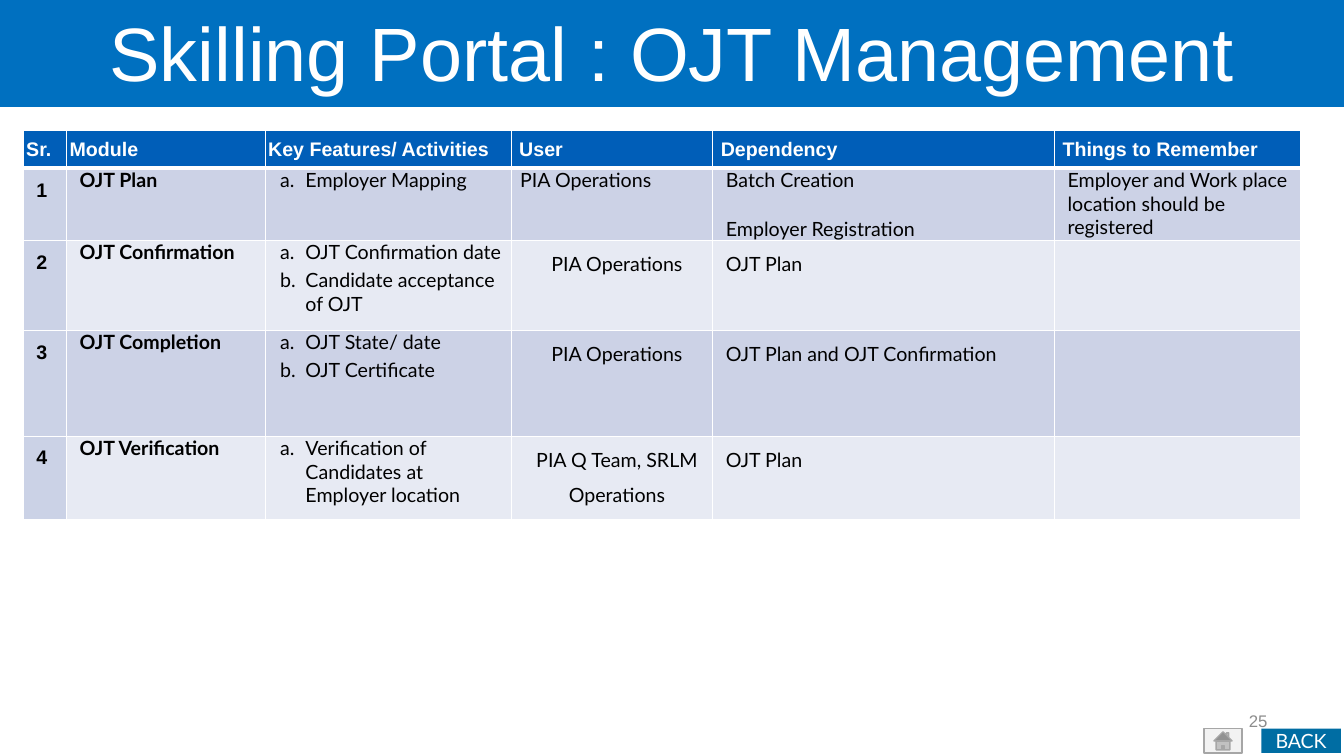
from lxml import etree
from pptx import Presentation
from pptx.dml.color import RGBColor
from pptx.enum.shapes import MSO_SHAPE
from pptx.enum.text import MSO_ANCHOR, PP_ALIGN
from pptx.oxml.ns import qn
from pptx.util import Inches, Pt

RECT, HOME = MSO_SHAPE.RECTANGLE, MSO_SHAPE.ACTION_BUTTON_HOME
TOP, MIDDLE = MSO_ANCHOR.TOP, MSO_ANCHOR.MIDDLE
LEFT, CENTER, RIGHT = PP_ALIGN.LEFT, PP_ALIGN.CENTER, PP_ALIGN.RIGHT

COLORS = {
    "white": "FFFFFF", "black": "000000", "banner": "0070C0", "header": "005EB8",
    "serial": "CBD2E6", "odd": "CCD2E6", "even": "E7EAF3", "back": "006DA3",
    "home": "F2F2F2", "home_line": "A6A6A6", "page": "8C8C8C",
}
COL_WIDTHS = [0.43, 1.97, 2.44, 2, 3.39, 2.44]
ROW_HEIGHTS = [0.38, 0.71, 0.89, 1.05, 0.83]
HEADERS = ["Sr.", "Module", "Key Features/ Activities", "User", "Dependency",
           "Things to Remember"]
MODULES = [
    ("OJT Plan", ["Employer Mapping"], "PIA Operations",
     ["Batch Creation", "Employer Registration"],
     ["Employer and Work place location should be registered"]),
    ("OJT Confirmation", ["OJT Confirmation date", "Candidate acceptance of OJT"],
     "PIA Operations", ["OJT Plan"], []),
    ("OJT Completion", ["OJT State/ date", "OJT Certificate"],
     "PIA Operations", ["OJT Plan and OJT Confirmation"], []),
    ("OJT Verification", ["Verification of Candidates at Employer location"],
     "PIA Q Team, SRLM Operations", ["OJT Plan"], []),
]


def rgb(name):
    """Return the named colour."""
    return RGBColor.from_string(COLORS[name])


def add_run(p, text, size, color, font="Arial", bold=False):
    """Add one formatted run to a paragraph."""
    r = p.add_run()
    r.text = text
    r.font.size, r.font.name, r.font.bold = Pt(size), font, bold
    r.font.color.rgb = rgb(color)
    return r


def add_box(s, kind, box, fill, line=None):
    """Add a preset shape with a plain fill and an optional outline."""
    sp = s.shapes.add_shape(kind, *map(Inches, box))
    sp.shadow.inherit = False
    sp.fill.solid()
    sp.fill.fore_color.rgb = rgb(fill)
    if line:
        sp.line.color.rgb = rgb(line)
        sp.line.width = Pt(1)
    else:
        sp.line.fill.background()
    return sp


def add_label(s, box, fill, text, size, font, anchor):
    """Add a filled rectangle with centred white text."""
    tf = add_box(s, RECT, box, fill).text_frame
    tf.word_wrap = True
    tf.vertical_anchor = anchor
    tf.margin_left = tf.margin_right = tf.margin_top = tf.margin_bottom = Inches(0.06)
    p = tf.paragraphs[0]
    p.alignment = CENTER
    return add_run(p, text, size, "white", font)


def style_cell(cell, fill, bottom=1, top=1):
    """Set the margins, white borders and fill of a cell."""
    cell.margin_left = cell.margin_right = Inches(0.03)
    cell.margin_top = cell.margin_bottom = 0
    tcPr = cell._tc.get_or_add_tcPr()
    for tag, width in (("lnL", 1), ("lnR", 1), ("lnT", top), ("lnB", bottom)):
        ln = etree.SubElement(tcPr, qn(f"a:{tag}"), w=str(Pt(width)))
        solid = etree.SubElement(ln, qn("a:solidFill"))
        etree.SubElement(solid, qn("a:srgbClr"), val=COLORS["white"])
    cell.fill.solid()
    cell.fill.fore_color.rgb = rgb(fill)


def fill_cell(cell, texts, font="Lato", bold=False, color="black", align=LEFT,
              indent=0.1, spacing=1, before=6, after=12, lettered=False):
    """Write paragraphs in a cell, lettered a, b, c if asked."""
    tf = cell.text_frame
    for i, text in enumerate(texts):
        p = tf.add_paragraph() if i else tf.paragraphs[0]
        p.alignment, p.line_spacing = align, spacing
        p.space_before, p.space_after = Pt(before if i else 0), Pt(after)
        pPr = p._p.get_or_add_pPr()
        pPr.set("marL", str(Inches(indent)))
        pPr.set("indent", str(Inches(-0.25 if lettered else 0)))
        if lettered:
            p.level = 1
            etree.SubElement(pPr, qn("a:buAutoNum"), type="alphaLcPeriod")
        add_run(p, text, 14, color, font, bold)


def add_modules(s, box):
    """Add the table of modules, one row for each."""
    tbl = s.shapes.add_table(len(ROW_HEIGHTS), len(COL_WIDTHS), *map(Inches, box)).table
    for col, width in zip(tbl.columns, COL_WIDTHS):
        col.width = Inches(width)
    for row, height in zip(tbl.rows, ROW_HEIGHTS):
        row.height = Inches(height)
    for i, text in enumerate(HEADERS):
        cell = tbl.cell(0, i)
        style_cell(cell, "header", bottom=3)
        cell.vertical_anchor = MIDDLE
        fill_cell(cell, [text], "Arial", True, "white", after=0,
                  indent=0.05 if i > 2 else 0)
    for n, (module, features, user, dependency, notes) in enumerate(MODULES, 1):
        cells = [tbl.cell(n, i) for i in range(len(HEADERS))]
        for i, cell in enumerate(cells):
            band = "odd" if n % 2 else "even"
            style_cell(cell, band if i else "serial", top=3 if n == 1 else 1)
        spacing = 1 if n == 1 else 1.5
        fill_cell(cells[0], [str(n)], "Arial", True, spacing=1.5)
        fill_cell(cells[1], [module], bold=True, after=0)
        fill_cell(cells[2], features, indent=0.37, before=3, after=0, lettered=True)
        fill_cell(cells[3], [user], align=LEFT if n == 1 else CENTER,
                  indent=0.06 if n == 1 else 0.1, spacing=spacing)
        fill_cell(cells[4], dependency, spacing=spacing)
        fill_cell(cells[5], notes)


def add_page_number(s, box, number):
    """Add the page number, right aligned in its box."""
    tf = s.shapes.add_textbox(*map(Inches, box)).text_frame
    tf.word_wrap = False
    tf.vertical_anchor = MIDDLE
    p = tf.paragraphs[0]
    p.alignment = RIGHT
    add_run(p, number, 12, "page")


def add_navigation(s, box):
    """Add the home button at the left and the back button at the right of a box."""
    left, top, width, height = box
    back = 0.79
    r = add_label(s, (left + width - back, top, back, height), "back", "BACK", 14,
                  "Lato", MIDDLE)
    r.font._element.set("spc", "-10")
    add_box(s, HOME, (left, top, 0.38, height), "home", "home_line")


def main():
    """Build and save the slide."""
    prs = Presentation()
    prs.slide_width, prs.slide_height = Inches(13.33), Inches(7.5)
    s = prs.slides.add_slide(prs.slide_layouts[6])
    add_page_number(s, (12.26, 7, 0.41, 0.3), "25")
    add_label(s, (0, 0, 13.33, 1.06), "banner", "Skilling Portal : OJT Management", 54,
              "Arial", TOP)
    add_modules(s, (0.23, 1.29, 12.68, 3.86))
    add_navigation(s, (11.94, 7.23, 1.36, 0.24))
    prs.save("out.pptx")


if __name__ == "__main__":
    main()
